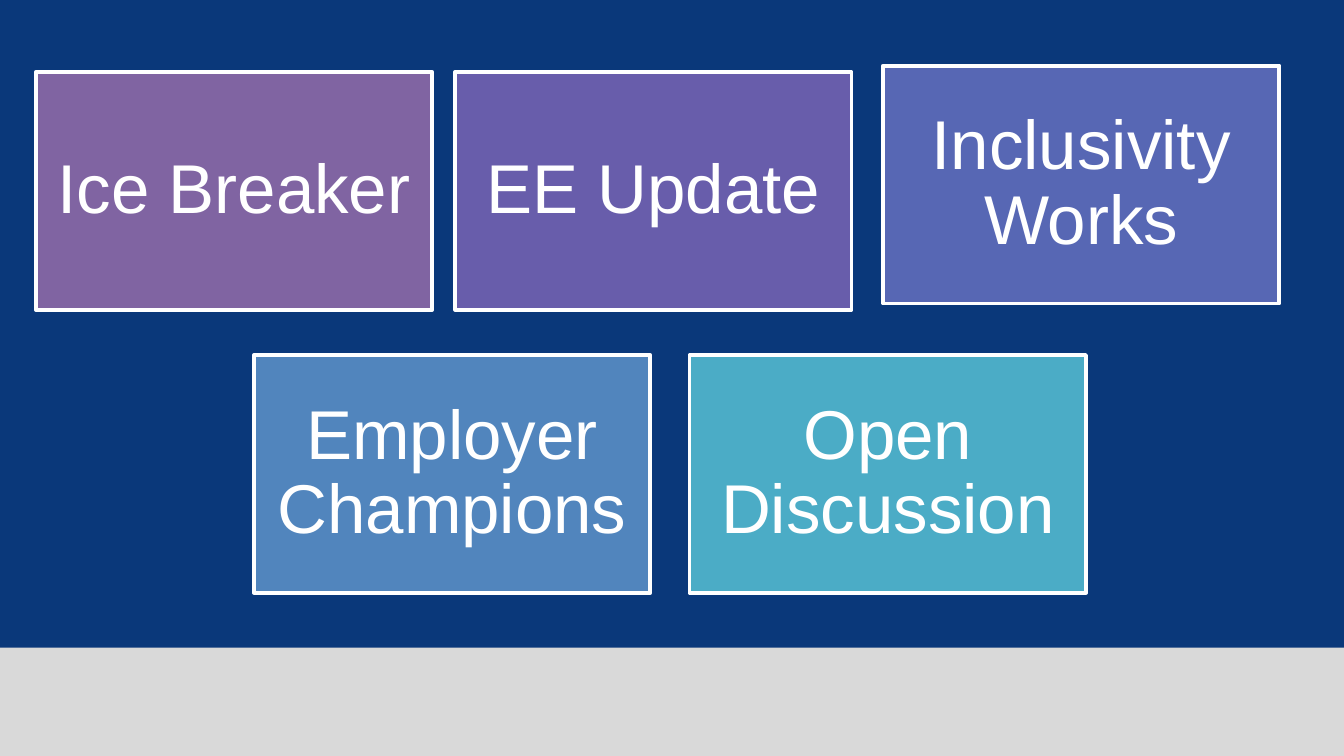
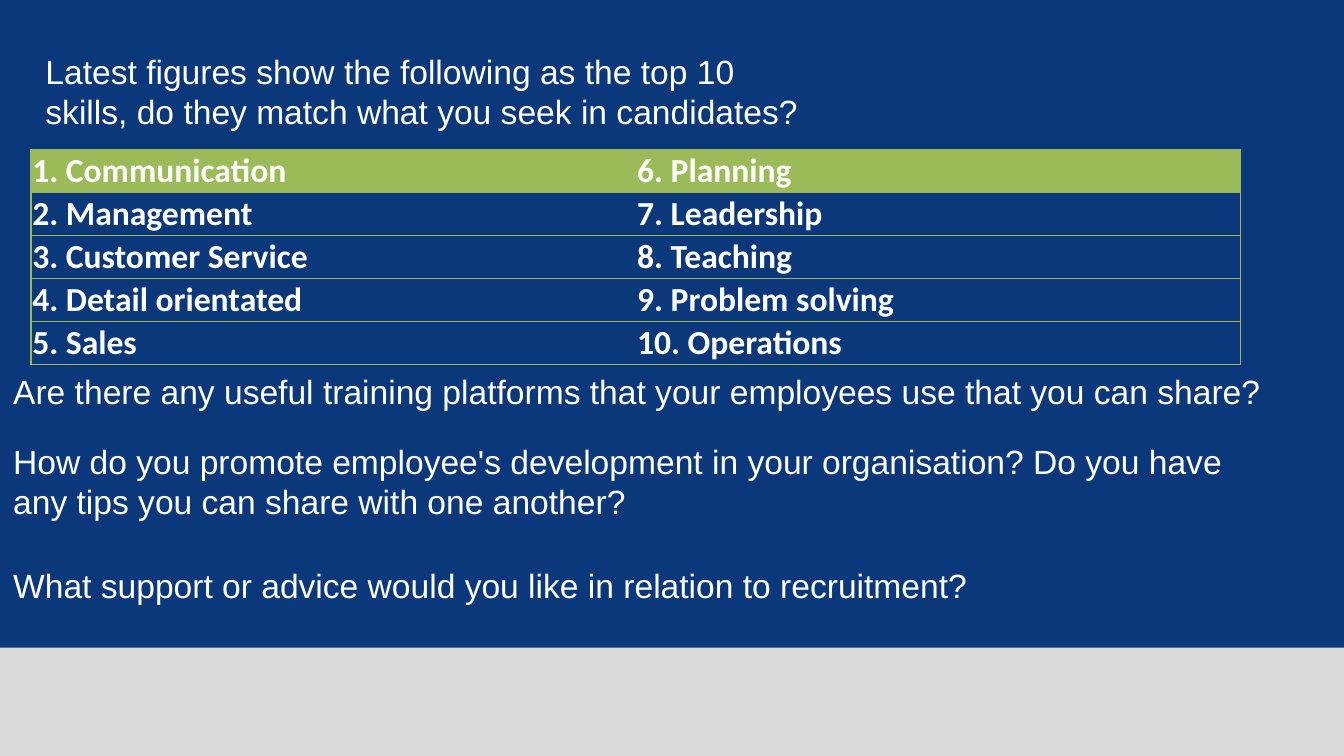
import pptx
import pptx.util
import pptx.dml.color
import pptx.enum.shapes
import pptx.enum.text
import pptx.oxml
import pptx.oxml.ns

Pt = pptx.util.Pt
RGB = pptx.dml.color.RGBColor
RECT = pptx.enum.shapes.MSO_SHAPE.RECTANGLE
MID = pptx.enum.text.MSO_ANCHOR.MIDDLE

NAVY = RGB(0x0A, 0x38, 0x7A)
GREY = RGB(0xD9, 0xD9, 0xD9)
WHITE = RGB(0xFF, 0xFF, 0xFF)
GREEN = RGB(0x9B, 0xBB, 0x59)
EDGE = RGB(0x98, 0xB9, 0x55)
PLUM = RGB(0x80, 0x64, 0xA2)
VIOLET = RGB(0x68, 0x5D, 0xAB)
INDIGO = RGB(0x57, 0x67, 0xB4)
BLUE = RGB(0x51, 0x85, 0xBD)
TEAL = RGB(0x4B, 0xAC, 0xC6)


def write(frame, text, size, face="Arial", bold=False):
    frame.word_wrap = True
    frame.text = text
    for run in frame.paragraphs[0].runs:
        run.font.size = Pt(size)
        run.font.name = face
        run.font.bold = bold
        run.font.color.rgb = WHITE


def block(slide, left, top, width, height, fill):
    shape = slide.shapes.add_shape(RECT, Pt(left), Pt(top), Pt(width), Pt(height))
    shape.shadow.inherit = False
    shape.fill.solid()
    shape.fill.fore_color.rgb = fill
    shape.line.fill.background()
    return shape


deck = pptx.Presentation()
deck.slide_width = Pt(720)
deck.slide_height = Pt(405)
back = deck.slide_master.background.fill
back.solid()
back.fore_color.rgb = NAVY

slides = [deck.slides.add_slide(deck.slide_layouts[6]) for _ in range(2)]
for slide in slides:
    block(slide, 0, 347, 720, 58, GREY)
agenda, skills = slides

tiles = [
    ("Ice Breaker", 19.2, 38.6, PLUM),
    ("EE Update", 243.8, 38.6, VIOLET),
    ("Inclusivity Works", 473, 35.2, INDIGO),
    ("Employer Champions", 136, 190.2, BLUE),
    ("Open Discussion", 369.4, 190.2, TEAL),
]
for text, left, top, fill in tiles:
    tile = block(agenda, left, top, 212.4, 127.4, fill)
    tile.line.color.rgb = WHITE
    tile.line.width = Pt(2)
    frame = tile.text_frame
    frame.margin_left = frame.margin_right = Pt(10.8)
    frame.margin_top = frame.margin_bottom = Pt(10.8)
    frame.vertical_anchor = MID
    write(frame, text, 37)
    para = frame.paragraphs[0]
    para.alignment = pptx.enum.text.PP_ALIGN.CENTER
    para.line_spacing = 0.9

notes = [
    ("Latest figures show the following as the top 10 skills, "
     "do they match what you seek in candidates?", 17.3, 23.8, 432, 51),
    ("Are there any useful training platforms that your employees "
     "use that you can share?", 0, 195.1, 698.4, 29),
    ("How do you promote employee's development in your organisation? "
     "Do you have any tips you can share with one another?", 0, 232.4, 681, 51),
    ("What support or advice would you like in relation to recruitment?",
     0, 299.3, 554.4, 29),
]
for text, left, top, width, height in notes:
    note = skills.shapes.add_textbox(Pt(left), Pt(top), Pt(width), Pt(height))
    write(note.text_frame, text, 18)

names = [
    "Communication", "Management", "Customer Service", "Detail orientated", "Sales",
    "Planning", "Leadership", "Teaching", "Problem solving", "Operations",
]
rows = len(names) // 2
table = skills.shapes.add_table(rows, 2, Pt(16.6), Pt(79.9), Pt(648), Pt(115.5)).table
for row in table.rows:
    row.height = Pt(23.1)
for spot, name in enumerate(names):
    col, row = divmod(spot, rows)
    cell = table.cell(row, col)
    cell.margin_left = cell.margin_right = Pt(0.72)
    cell.margin_top = cell.margin_bottom = Pt(0.72)
    cell.vertical_anchor = MID
    write(cell.text_frame, f"{spot + 1}. {name}", 18, "Calibri", True)
    props = cell._tc.get_or_add_tcPr()
    inner = "R" if col == 0 else "L"
    for side in "LRTB":
        paint = f'<a:solidFill><a:srgbClr val="{EDGE}"/></a:solidFill>'
        if side == inner:
            paint = "<a:noFill/>"
        props.append(pptx.oxml.parse_xml(
            f'<a:ln{side} {pptx.oxml.ns.nsdecls("a")} w="{Pt(0.75)}">{paint}</a:ln{side}>'))
    if row == 0:
        cell.fill.solid()
        cell.fill.fore_color.rgb = GREEN
    else:
        cell.fill.background()

deck.save("out.pptx")
